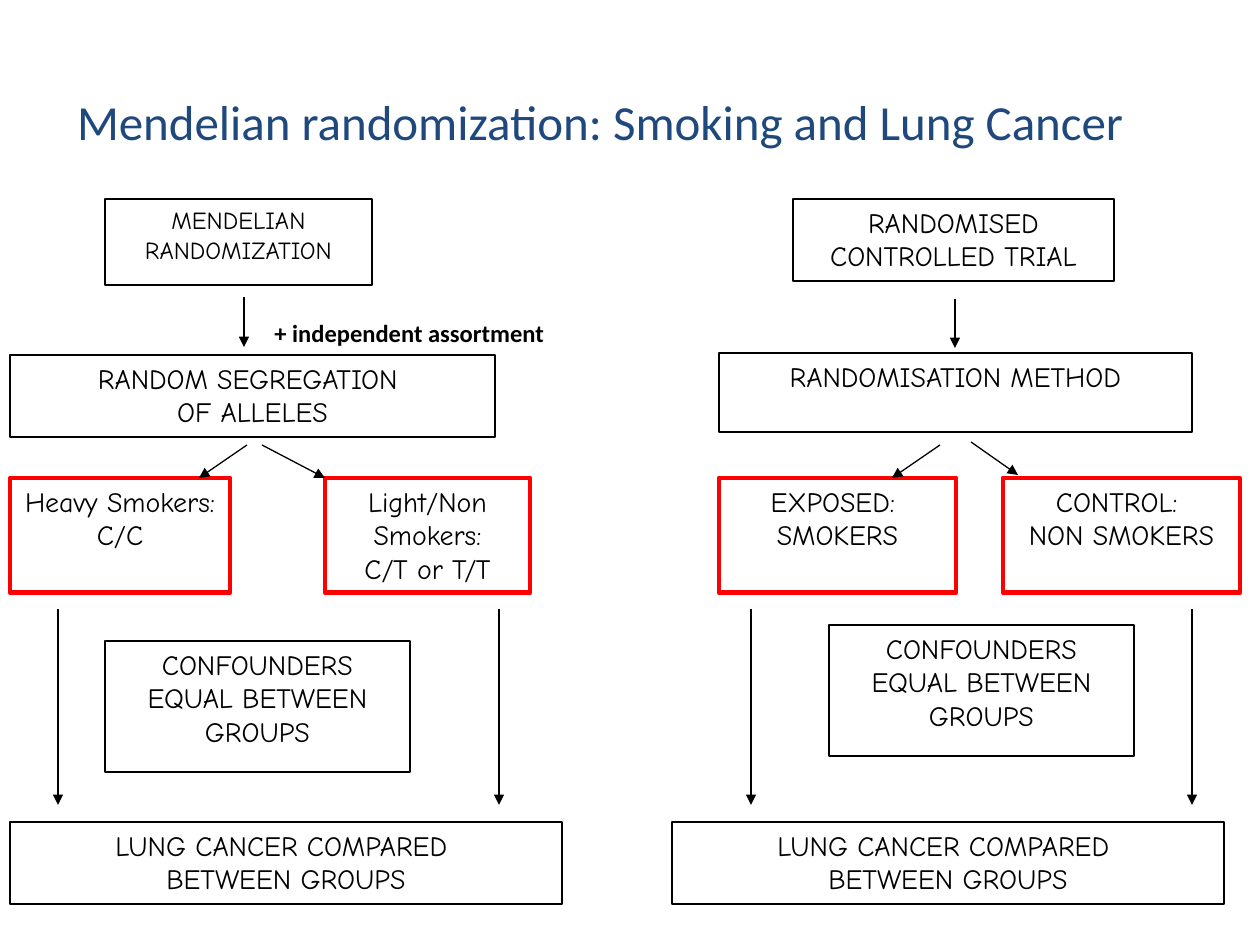
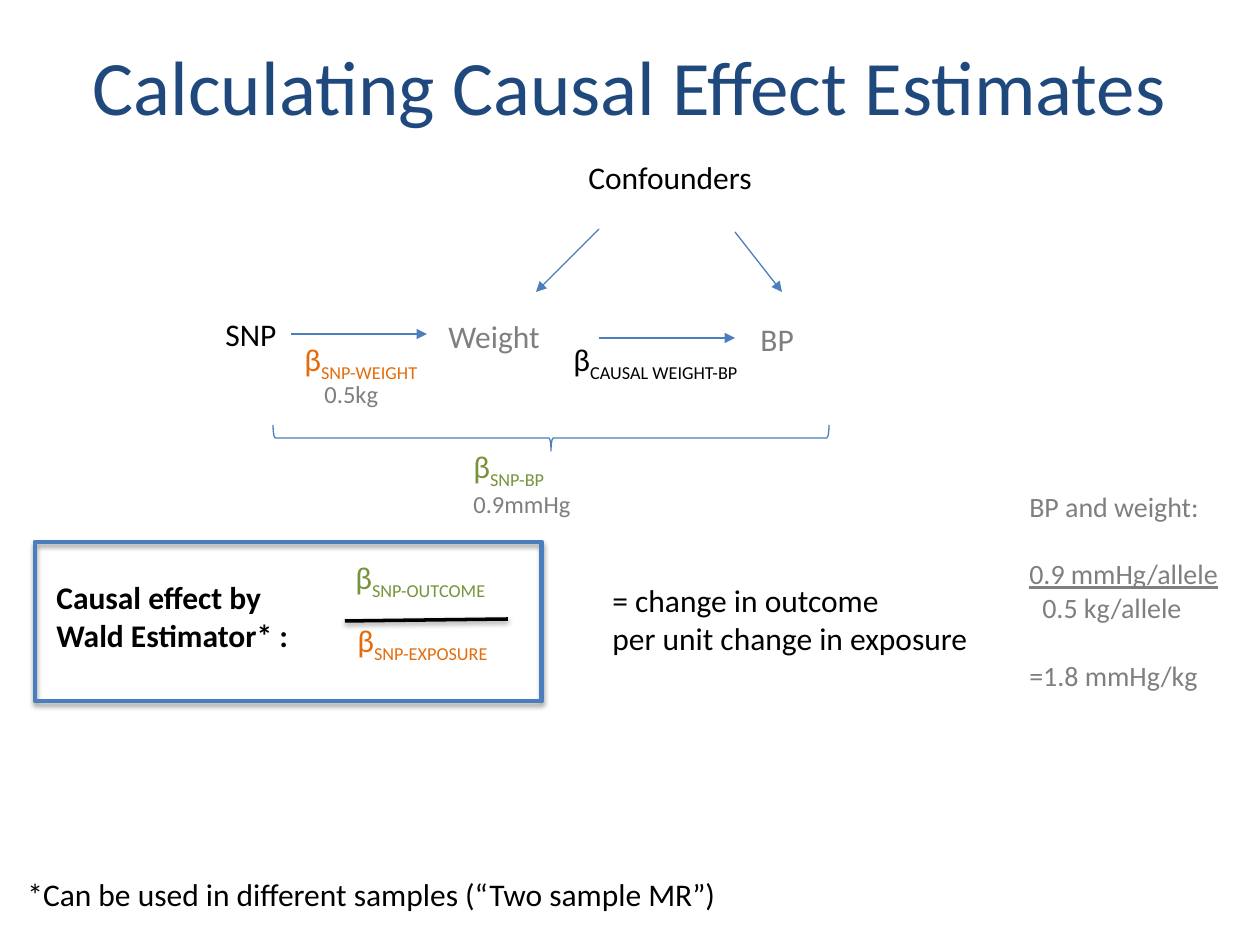
from dataclasses import dataclass

from lxml import etree
from pptx import Presentation
from pptx.dml.color import RGBColor
from pptx.enum.shapes import MSO_CONNECTOR, MSO_SHAPE
from pptx.enum.text import MSO_ANCHOR, PP_ALIGN
from pptx.oxml.ns import qn
from pptx.util import Emu, Pt

RECTANGLE, BRACE = MSO_SHAPE.RECTANGLE, MSO_SHAPE.RIGHT_BRACE
STRAIGHT = MSO_CONNECTOR.STRAIGHT
LEFT, CENTER = PP_ALIGN.LEFT, PP_ALIGN.CENTER
TOP, MIDDLE = MSO_ANCHOR.TOP, MSO_ANCHOR.MIDDLE


@dataclass(frozen=True)
class Theme:
    body_font: str = "Calibri"
    flow_font: str = "Comic Neue"
    title: str = "1F497D"
    ink: str = "000000"
    paper: str = "FFFFFF"
    gray: str = "7F7F7F"
    blue: str = "4B7EBC"
    red: str = "FF0000"
    green: str = "77933C"
    orange: str = "E46C0A"
    body: int = 18
    medium: int = 16
    small: int = 14
    thin: float = 0.75
    medium_line: float = 2
    thick: float = 2.75


THEME = Theme()


# Shared helpers
def px(value):
    return Emu(round(value * 914400 / 126))


def place(origin, box):
    """Turn a box relative to origin into slide lengths."""
    left, top, width, height = box
    return px(origin[0] + left), px(origin[1] + top), px(width), px(height)


def write(text_frame, text, size, color, font=THEME.body_font, bold=False,
          align=LEFT):
    text_frame.text = text
    for paragraph in text_frame.paragraphs:
        paragraph.alignment = align
        for run in paragraph.runs:
            style(run, size, color, font, bold)


def style(run, size, color, font=THEME.body_font, bold=False):
    run.font.size, run.font.name, run.font.bold = Pt(size), font, bold
    run.font.color.rgb = RGBColor.from_string(color)


def add_label(slide, origin, box, text, size=THEME.body, color=THEME.ink,
              wrap=False, anchor=TOP, **options):
    text_frame = slide.shapes.add_textbox(*place(origin, box)).text_frame
    text_frame.word_wrap = wrap
    text_frame.vertical_anchor = anchor
    write(text_frame, text, size, color, **options)
    return text_frame


def add_title(slide, box, text, size):
    add_label(slide, (0, 0), box, text, size, THEME.title, wrap=True,
              anchor=MIDDLE, align=CENTER)


def add_beta(slide, origin, box, subscript, color):
    paragraph = add_label(slide, origin, box, "β", color=color).paragraphs[0]
    run = paragraph.add_run()
    run.text = subscript
    style(run, THEME.body, color)
    run._r.get_or_add_rPr().set("baseline", "-25000")


def set_line(shape, color, width):
    shape.line.color.rgb = RGBColor.from_string(color)
    shape.line.width = Pt(width)


def add_outline(slide, preset, origin, box, color, width):
    shape = slide.shapes.add_shape(preset, *place(origin, box))
    shape.shadow.inherit = False
    shape.fill.background()
    set_line(shape, color, width)
    return shape


def add_line(slide, origin, ends, color=THEME.ink, width=THEME.thin, arrow=True):
    x1, y1, x2, y2 = ends
    left, top = origin
    line = slide.shapes.add_connector(STRAIGHT, px(left + x1), px(top + y1),
                                      px(left + x2), px(top + y2))
    set_line(line, color, width)
    if arrow:
        etree.SubElement(line.line._get_or_add_ln(), qn("a:tailEnd"), type="triangle")
    etree.SubElement(line._element.spPr, qn("a:effectLst"))
    return line


def add_shadow(shape, distance, opacity):
    effects = shape._element.spPr.find(qn("a:effectLst"))
    shadow = etree.SubElement(effects, qn("a:outerShdw"), blurRad=str(Pt(3.1)),
                              dist=str(Pt(distance)), dir="5400000", rotWithShape="0")
    color = etree.SubElement(shadow, qn("a:srgbClr"), val=THEME.ink)
    etree.SubElement(color, qn("a:alpha"), val=str(opacity * 1000))


# Slide 1: two parallel study designs
@dataclass(frozen=True)
class StudyDesign:
    origin: tuple
    header: tuple        # box, text, size
    method: tuple        # box, text
    groups: tuple        # two (box, text)
    confounders: tuple   # left, top
    short_arrows: tuple  # ends
    long_arrows: tuple   # x positions


MENDELIAN = StudyDesign(
    origin=(10, 199),
    header=((95, 0, 267, 86), "MENDELIAN RANDOMIZATION", THEME.small),
    method=((0, 156, 485, 82), "RANDOM SEGREGATION \nOF ALLELES"),
    groups=(((0, 279, 220, 115), "Heavy Smokers: \nC/C"),
            ((315, 279, 205, 115), "Light/Non Smokers:\nC/T or T/T")),
    confounders=(95, 442),
    short_arrows=((234, 98, 234, 148), (252, 246, 315, 279), (237, 246, 189, 279)),
    long_arrows=(48, 489),
)
TRIAL = StudyDesign(
    origin=(672, 199),
    header=((121, 0, 321, 82), "RANDOMISED CONTROLLED TRIAL", THEME.medium),
    method=((47, 154, 473, 79), "RANDOMISATION METHOD"),
    groups=(((47, 279, 237, 115), "EXPOSED: \nSMOKERS"),
            ((331, 279, 237, 115), "CONTROL: \nNON SMOKERS")),
    confounders=(157, 426),
    short_arrows=((283, 100, 283, 149), (268, 246, 220, 279), (299, 243, 346, 276)),
    long_arrows=(79, 520),
)


def add_step(slide, origin, box, text, size=THEME.medium, color=THEME.ink,
             width=THEME.thin):
    step = add_outline(slide, RECTANGLE, origin, box, color, width)
    step.fill.solid()
    step.fill.fore_color.rgb = RGBColor.from_string(THEME.paper)
    step.text_frame.word_wrap = True
    step.text_frame.vertical_anchor = TOP
    write(step.text_frame, text, size, THEME.ink, THEME.flow_font, align=CENTER)


def draw_study_design(slide, design):
    origin = design.origin
    add_step(slide, origin, *design.header)
    add_step(slide, origin, *design.method)
    for box, text in design.groups:
        add_step(slide, origin, box, text, color=THEME.red, width=THEME.thick)
    add_step(slide, origin, (*design.confounders, 305, 131),
             "CONFOUNDERS EQUAL BETWEEN GROUPS")
    add_step(slide, origin, (0, 623, 552, 82),
             "LUNG CANCER COMPARED \nBETWEEN GROUPS")
    for ends in design.short_arrows:
        add_line(slide, origin, ends)
    for x in design.long_arrows:
        add_line(slide, origin, (x, 410, x, 606))


def build_design_slide(slide):
    add_title(slide, (35, 42, 1130, 158),
              "Mendelian randomization: Smoking and Lung Cancer", 28)
    for design in (MENDELIAN, TRIAL):
        draw_study_design(slide, design)
    add_label(slide, MENDELIAN.origin, (252, 113, 297, 43),
              "+ independent assortment", THEME.small, bold=True)


# Slide 2: causal diagram and Wald estimator
def draw_causal_diagram(slide, origin):
    for box, text, color in (
        ((13, 159, 136, 50), "SNP", THEME.ink),
        ((236, 161, 246, 50), "Weight", THEME.gray),
        ((376, 2, 207, 50), "Confounders", THEME.ink),
        ((548, 164, 59, 50), "BP", THEME.gray),
    ):
        add_label(slide, origin, box, text, color=color, wrap=True)
    for ends in ((91, 184, 227, 184), (399, 188, 535, 188),
                 (399, 79, 336, 142), (535, 82, 582, 142)):
        add_line(slide, origin, ends, THEME.blue)
    for box, subscript, color in (
        ((92, 184, 155, 50), "SNP-WEIGHT", THEME.orange),
        ((361, 184, 215, 50), "CAUSAL WEIGHT-BP", THEME.ink),
        ((261, 291, 106, 50), "SNP-BP", THEME.green),
    ):
        add_beta(slide, origin, box, subscript, color)
    for box, text in (((112, 223, 79, 43), "0.5kg"),
                      ((261, 333, 123, 43), "0.9mmHg")):
        add_label(slide, origin, box, text, THEME.small, THEME.gray)
    brace = add_outline(slide, BRACE, origin, (338, 10, 26, 556),
                        THEME.blue, THEME.thin)
    brace.rotation = 90


def draw_wald_estimator(slide, box):
    origin = box[:2]
    frame = add_outline(slide, RECTANGLE, (0, 0), box, THEME.blue, THEME.thick)
    add_shadow(frame, 1.8, 35)
    add_label(slide, origin, (9, 30, 262, 89),
              "Causal effect by\nWald Estimator* :", bold=True)
    add_beta(slide, origin, (308, 10, 175, 50), "SNP-OUTCOME", THEME.green)
    add_beta(slide, origin, (310, 73, 175, 50), "SNP-EXPOSURE", THEME.orange)
    fraction_bar = add_line(slide, origin, (310, 79, 473, 77),
                            width=THEME.medium_line, arrow=False)
    add_shadow(fraction_bar, 1.6, 38)


def draw_worked_example(slide, box):
    text_frame = add_label(
        slide, (0, 0), box,
        "BP and weight:\n0.9 mmHg/allele\n0.5 kg/allele\n=1.8 mmHg/kg",
        THEME.medium, THEME.gray)
    _, numerator, denominator, result = text_frame.paragraphs
    numerator.runs[0].font.underline = True
    denominator._p.get_or_add_pPr().set("marL", str(px(13)))
    for paragraph in (numerator, result):
        paragraph.space_before = Pt(19.5)


def build_estimate_slide(slide):
    add_title(slide, (63, 6, 1134, 158), "Calculating Causal Effect Estimates", 44)
    draw_causal_diagram(slide, (200, 150))
    draw_wald_estimator(slide, (35, 542, 507, 159))
    add_label(slide, (0, 0), (600, 575, 386, 89),
              "= change in outcome\nper unit change in exposure")
    draw_worked_example(slide, (1017, 483, 215, 217))
    add_label(slide, (0, 0), (15, 869, 721, 50),
              "*Can be used in different samples (“Two sample MR”)")


def main():
    presentation = Presentation()
    presentation.slide_width, presentation.slide_height = px(1260), px(945)
    blank = presentation.slide_layouts[6]
    for build in (build_design_slide, build_estimate_slide):
        build(presentation.slides.add_slide(blank))
    presentation.save("out.pptx")


if __name__ == "__main__":
    main()
